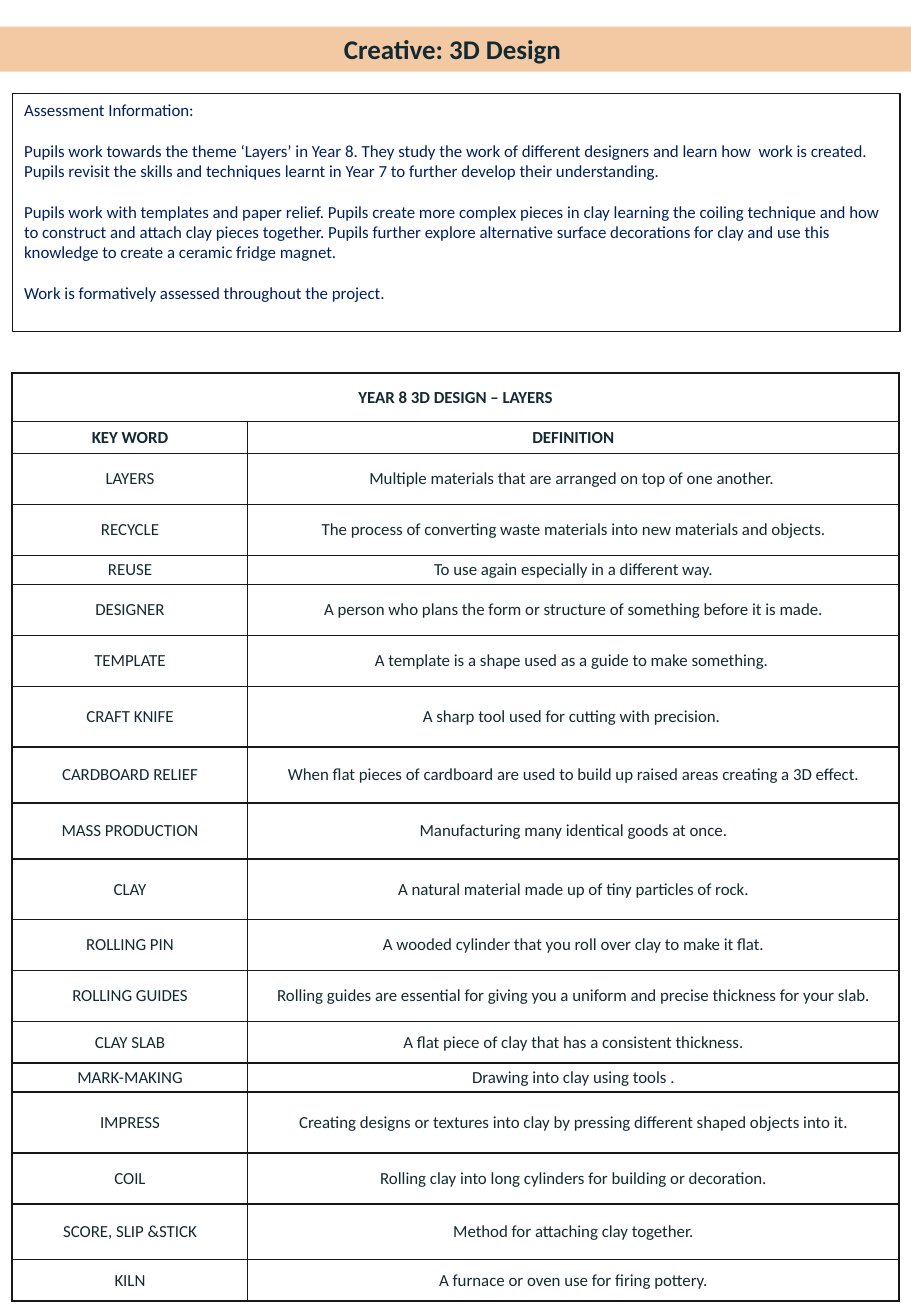
from dataclasses import dataclass

from lxml import etree
from pptx import Presentation
from pptx.dml.color import RGBColor
from pptx.enum.shapes import MSO_SHAPE
from pptx.enum.text import MSO_ANCHOR, MSO_AUTO_SIZE, PP_ALIGN
from pptx.oxml.ns import qn
from pptx.util import Inches, Pt

RECTANGLE = MSO_SHAPE.RECTANGLE
TOP, MIDDLE = MSO_ANCHOR.TOP, MSO_ANCHOR.MIDDLE
LEFT, CENTER = PP_ALIGN.LEFT, PP_ALIGN.CENTER
NO_AUTOFIT = MSO_AUTO_SIZE.NONE


@dataclass(frozen=True)
class Theme:
    font: str = "Calibri"
    ink: str = "142A33"
    navy: str = "002060"
    line: str = "181717"
    band: str = "F3C9A4"
    title_size: float = 16
    body_size: float = 10
    paragraph_gap: float = 12.2
    box_line: float = 0.75
    cell_line: float = 1


TITLE = "Creative: 3D Design "

ASSESSMENT = [
    "Assessment Information:",
    "Pupils work towards the theme ‘Layers’ in Year 8. They study the work of different "
    "designers and learn how  work is created. Pupils revisit the skills and techniques "
    "learnt in Year 7 to further develop their understanding.",
    "Pupils work with templates and paper relief. Pupils create more complex pieces in clay "
    "learning the coiling technique and how to construct and attach clay pieces together. "
    "Pupils further explore alternative surface decorations for clay and use this knowledge "
    "to create a ceramic fridge magnet.",
    "Work is formatively assessed throughout the project.",
]

HEADING = "YEAR 8 3D DESIGN – LAYERS"
HEADING_HEIGHT = 0.4
COLUMN_WIDTHS = [1.94, 5.36]

KEY_WORDS = [
    (0.26, "KEY WORD", "DEFINITION"),
    (0.42, "LAYERS", "Multiple materials that are arranged on top of one another. "),
    (0.42, "RECYCLE", "The process of converting waste materials into new materials and objects."),
    (0.24, "REUSE", "To use again especially in a different way."),
    (0.42, "DESIGNER", "A person who plans the form or structure of something before it is made."),
    (0.42, "TEMPLATE", "A template is a shape used as a guide to make something. "),
    (0.5, "CRAFT KNIFE", "A sharp tool used for cutting with precision. "),
    (0.46, "CARDBOARD RELIEF",
     "When flat pieces of cardboard are used to build up raised areas creating a 3D effect."),
    (0.46, "MASS PRODUCTION", "Manufacturing many identical goods at once."),
    (0.5, "CLAY", "A natural material made up of tiny particles of rock."),
    (0.42, "ROLLING PIN", "A wooded cylinder that you roll over clay to make it flat."),
    (0.42, "ROLLING GUIDES",
     "Rolling guides are essential for giving you a uniform and precise thickness for your slab."),
    (0.34, "CLAY SLAB", "A flat piece of clay that has a consistent thickness."),
    (0.24, "MARK-MAKING", "Drawing into clay using tools ."),
    (0.5, "IMPRESS",
     "Creating designs or textures into clay by pressing different shaped objects into it."),
    (0.42, "COIL", "Rolling clay into long cylinders for building or decoration."),
    (0.46, "SCORE, SLIP &STICK", "Method for attaching clay together."),
    (0.34, "KILN", "A furnace or oven use for firing pottery."),
]


class PageBuilder:
    """Holds the theme and the current slide and adds each kind of element."""

    def __init__(self, page, theme):
        self.page = page
        self.theme = theme

    def add_text(self, para, text, color, size, bold=False, align=CENTER):
        para.alignment = align
        span = para.add_run()
        span.text = text
        span.font.name = self.theme.font
        span.font.size = Pt(size)
        span.font.bold = bold
        span.font.color.rgb = RGBColor.from_string(color)

    def title(self, text, left, top, width, height):
        box = self.page.shapes.title
        box.left, box.top = Inches(left), Inches(top)
        box.width, box.height = Inches(width), Inches(height)
        box.fill.solid()
        box.fill.fore_color.rgb = RGBColor.from_string(self.theme.band)
        frame = box.text_frame
        frame.auto_size = NO_AUTOFIT
        frame.vertical_anchor = MIDDLE
        self.add_text(frame.paragraphs[0], text, self.theme.ink, self.theme.title_size, bold=True)

    def outlined_text(self, texts, left, top, width, height):
        box = self.page.shapes.add_shape(
            RECTANGLE, Inches(left), Inches(top), Inches(width), Inches(height))
        box.shadow.inherit = False
        box.fill.background()
        box.line.color.rgb = RGBColor.from_string(self.theme.line)
        box.line.width = Pt(self.theme.box_line)
        frame = box.text_frame
        frame.word_wrap = True
        frame.vertical_anchor = TOP
        for index, text in enumerate(texts):
            para = frame.add_paragraph() if index else frame.paragraphs[0]
            if index:
                para.space_before = Pt(self.theme.paragraph_gap)
            self.add_text(para, text, self.theme.navy, self.theme.body_size, align=LEFT)

    def style_cell(self, cell):
        cell.margin_left = cell.margin_right = cell.margin_top = cell.margin_bottom = 0
        cell.vertical_anchor = MIDDLE
        properties = cell._tc.get_or_add_tcPr()
        for side in ("a:lnL", "a:lnR", "a:lnT", "a:lnB"):
            border = etree.SubElement(properties, qn(side), w=str(Pt(self.theme.cell_line)))
            fill = etree.SubElement(border, qn("a:solidFill"))
            etree.SubElement(fill, qn("a:srgbClr"), val=self.theme.line)
        cell.fill.background()

    def glossary(self, heading, entries, left, top):
        heights = [HEADING_HEIGHT] + [entry[0] for entry in entries]
        table = self.page.shapes.add_table(
            len(heights), len(COLUMN_WIDTHS), Inches(left), Inches(top),
            Inches(sum(COLUMN_WIDTHS)), Inches(sum(heights))).table
        table.first_row = table.horz_banding = False
        for column, width in zip(table.columns, COLUMN_WIDTHS):
            column.width = Inches(width)
        for row, height in zip(table.rows, heights):
            row.height = Inches(height)
        for cell in table.iter_cells():
            self.style_cell(cell)
        table.cell(0, 0).merge(table.cell(0, 1))
        rows = [(heading,)] + [entry[1:] for entry in entries]
        for row_index, texts in enumerate(rows):
            for column_index, text in enumerate(texts):
                para = table.cell(row_index, column_index).text_frame.paragraphs[0]
                self.add_text(para, text, self.theme.ink, self.theme.body_size, bold=row_index < 2)


def main():
    deck = Presentation()
    deck.slide_width, deck.slide_height = Inches(7.5), Inches(10.83)
    builder = PageBuilder(deck.slides.add_slide(deck.slide_layouts[5]), Theme())
    builder.title(TITLE, 0, 0.22, 7.5, 0.37)
    builder.outlined_text(ASSESSMENT, 0.1, 0.77, 7.31, 1.96)
    builder.glossary(HEADING, KEY_WORDS, 0.1, 3.07)
    deck.save("out.pptx")


if __name__ == "__main__":
    main()
